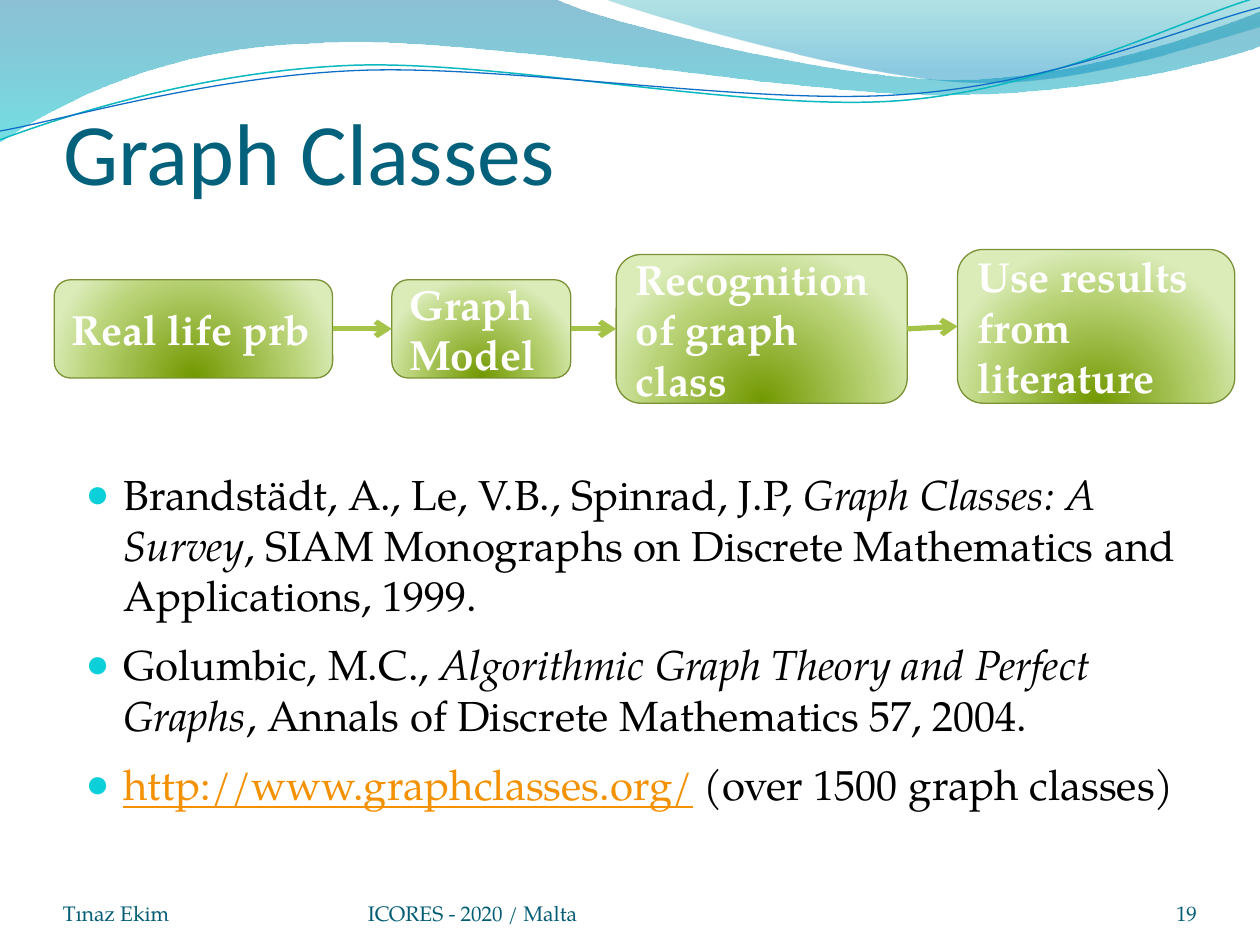
"""Build the Graph Classes slide with its flow of boxes and its references."""
from pptx import Presentation
from pptx.dml.color import RGBColor
from pptx.enum.shapes import MSO_CONNECTOR, MSO_SHAPE
from pptx.enum.text import MSO_ANCHOR, MSO_AUTO_SIZE, PP_ALIGN
from pptx.oxml import parse_xml
from pptx.oxml.ns import nsdecls, qn
from pptx.util import Inches, Pt

TITLE = RGBColor(0x04, 0x61, 0x7B)
FOOT = RGBColor(0x04, 0x5D, 0x75)
BLACK = RGBColor(0, 0, 0)
WHITE = RGBColor(0xFF, 0xFF, 0xFF)
LINK = RGBColor(0xF4, 0x91, 0x00)
BULLET = RGBColor(0x0B, 0xD0, 0xD9)
EDGE = RGBColor(0x7B, 0x91, 0x35)
ARROW = RGBColor(0xA5, 0xC2, 0x49)
TEAL = RGBColor(0x0A, 0xB8, 0xBF)
BLUE = RGBColor(0x0F, 0x6F, 0xC6)
GREENS = [(0, RGBColor(0x72, 0x98, 0x00), 100), (68, RGBColor(0xB8, 0xD2, 0x75), 100),
          (100, RGBColor(0xDB, 0xEC, 0xB9), 100)]
SEA = [(0, RGBColor(0x00, 0x74, 0xA1), 45), (100, RGBColor(0x00, 0xC6, 0xCF), 55)]
SKY = [(0, RGBColor(0x00, 0xA1, 0xA9), 30), (80, RGBColor(0x00, 0x8B, 0xBF), 45)]
DOWN = '<a:lin ang="5400000" scaled="0"/>'
GLOW = '<a:path path="circle"><a:fillToRect l="50000" t="130000" r="50000" b="-30000"/></a:path>'

WAVES = [
    ((0, 0), [(4.4, -0.01), (4.76, 0.17, 6.64, 0.63, 7.58, 0.63),
              (8.53, 0.63, 9.58, 0.26, 10, 0.09), (10.01, 0.36),
              (9.83, 0.44, 8.7, 0.76, 7.46, 0.75), (6.22, 0.75, 3.82, 0.28, 2.57, 0.34),
              (1.29, 0.36, 0.46, 0.83, -0.01, 1.13)], SEA),
    ((4.79, -0.01), [(5.09, 0.11, 6.82, 0.62, 7.69, 0.65),
                     (8.56, 0.69, 9.61, 0.32, 10, 0.21), (10, 0)], SKY),
]
STROKES = [
    ((0, 1.11), [(0.48, 0.93, 1.58, 0.57, 2.77, 0.52), (3.95, 0.47, 5.93, 0.89, 7.13, 0.8),
                 (8.33, 0.71, 9.38, 0.15, 9.98, -0.02)], TEAL, 0.85),
    ((0, 1.04), [(0.47, 0.96, 1.64, 0.61, 2.83, 0.56), (4.03, 0.51, 5.97, 0.84, 7.17, 0.75),
                 (8.36, 0.67, 9.41, 0.21, 10, 0.06)], BLUE, 0.75),
]
STEPS = [
    ("Real life prb", 0.43, 2.22, 2.21, 0.78),
    ("Graph Model", 3.11, 2.22, 1.42, 0.78),
    ("Recognition of graph class", 4.89, 2.02, 2.31, 1.18),
    ("Use results from literature", 7.6, 1.98, 2.2, 1.22),
]
PLAIN, SLANT, URL = {}, {"italic": True}, {"color": LINK, "underline": True}
BOOKS = [
    [("Brandstädt, A., Le, V.B., Spinrad, J.P, ", PLAIN), ("Graph Classes: A Survey", SLANT),
     (", SIAM Monographs on Discrete Mathematics and Applications, 1999.", PLAIN)],
    [("Golumbic, M.C., ", PLAIN), ("Algorithmic Graph Theory and Perfect Graphs", SLANT),
     (", Annals of Discrete Mathematics 57, 2004.", PLAIN)],
    [("http://www.graphclasses.org/", URL), (" (over 1500 graph classes)", PLAIN)],
]
NOTES = [
    ("Tınaz Ekim", 0.5, 2.33, PP_ALIGN.LEFT),
    ("ICORES - 2020 / Malta", 2.92, 3.67, PP_ALIGN.LEFT),
    ("19", 8.67, 0.83, PP_ALIGN.RIGHT),
]


class Deck:
    """Hold the style and the current slide."""

    def __init__(self):
        self.show = Presentation()
        self.show.slide_width, self.show.slide_height = Inches(10), Inches(7.5)
        self.slide = self.show.slides.add_slide(self.show.slide_layouts[1])
        self.shapes = self.slide.shapes
        self.font = "TeX Gyre Pagella"

    def run(self, para, text, size, color=BLACK, font=None, **style):
        run = para.add_run()
        run.text = text
        run.font.name = font or self.font
        run.font.size = Pt(size)
        run.font.color.rgb = color
        for name, value in style.items():
            setattr(run.font, name, value)

    def place(self, shape, *box):
        shape.left, shape.top, shape.width, shape.height = map(Inches, box)
        self.shapes._spTree.append(shape._element)
        shape.text_frame.auto_size = MSO_AUTO_SIZE.NONE
        return shape.text_frame

    def shade(self, shape, stops, kind):
        shape.fill.background()
        props = shape._element.spPr
        marks = "".join(
            f'<a:gs pos="{spot * 1000}"><a:srgbClr val="{color}">'
            f'<a:alpha val="{alpha * 1000}"/></a:srgbClr></a:gs>' for spot, color, alpha in stops)
        props.replace(props.find(qn("a:noFill")), parse_xml(
            f'<a:gradFill {nsdecls("a")} rotWithShape="1"><a:gsLst>{marks}</a:gsLst>{kind}</a:gradFill>'))

    def curve(self, start, parts, closed):
        spots = [(Inches(x), Inches(y)) for part in parts for x, y in zip(part[::2], part[1::2])]
        pen = self.shapes.build_freeform(*map(Inches, start))
        pen.add_line_segments(spots, close=closed)
        shape = pen.convert_to_shape()
        shape.shadow.inherit = False
        nodes = list(shape._element.iter(qn("a:lnTo")))
        for part in parts:
            count = len(part) // 2
            group, nodes = nodes[:count], nodes[count:]
            if count == 3:
                bend = parse_xml(f'<a:cubicBezTo {nsdecls("a")}/>')
                group[0].addprevious(bend)
                for node in group:
                    bend.append(node[0])
                    node.getparent().remove(node)
        return shape

    def wave(self, start, parts, stops):
        shape = self.curve(start, parts, True)
        self.shade(shape, stops, DOWN)
        shape.line.fill.background()

    def stroke(self, start, parts, color, width):
        shape = self.curve(start, parts, False)
        shape.fill.background()
        shape.line.color.rgb = color
        shape.line.width = Pt(width)

    def title(self, text):
        frame = self.place(self.shapes.title, 0.5, 0.36, 9, 1.25)
        frame.vertical_anchor = MSO_ANCHOR.BOTTOM
        frame.margin_left = frame.margin_right = frame.margin_bottom = 0
        frame.paragraphs[0].alignment = PP_ALIGN.LEFT
        self.run(frame.paragraphs[0], text, 50, TITLE, "Calibri")

    def items(self, rows):
        frame = self.place(self.slide.placeholders[1], 0.58, 3.67, 9.22, 3.31)
        for index, row in enumerate(rows):
            para = frame.add_paragraph() if index else frame.paragraphs[0]
            para.space_after = Pt(6)
            props = para._p.get_or_add_pPr()
            props.set("marL", str(Inches(0.3)))
            props.set("indent", str(-Inches(0.3)))
            for mark in (f'buClr {nsdecls("a")}><a:srgbClr val="{BULLET}"/></a:buClr>',
                         f'buSzPct {nsdecls("a")} val="95000"/>',
                         f'buChar {nsdecls("a")} char="●"/>'):
                props.append(parse_xml("<a:" + mark))
            for text, style in row:
                self.run(para, text, 24, **style)

    def note(self, text, left, width, align):
        box = self.shapes.add_textbox(Inches(left), Inches(6.95), Inches(width), Inches(0.4))
        frame = box.text_frame
        frame.word_wrap = True
        frame.vertical_anchor = MSO_ANCHOR.BOTTOM
        frame.margin_left = frame.margin_right = frame.margin_top = frame.margin_bottom = 0
        frame.paragraphs[0].alignment = align
        self.run(frame.paragraphs[0], text, 12, FOOT)

    def step(self, text, *box):
        shape = self.shapes.add_shape(MSO_SHAPE.ROUNDED_RECTANGLE, *map(Inches, box))
        shape.shadow.inherit = False
        self.shade(shape, GREENS, GLOW)
        shape.line.color.rgb = EDGE
        shape.line.width = Pt(0.75)
        frame = shape.text_frame
        frame.word_wrap = True
        frame.vertical_anchor = MSO_ANCHOR.MIDDLE
        frame.paragraphs[0].alignment = PP_ALIGN.LEFT
        self.run(frame.paragraphs[0], text, 24, WHITE, bold=True)
        return shape

    def arrow(self, first, last):
        line = self.shapes.add_connector(MSO_CONNECTOR.STRAIGHT, 0, 0, 0, 0)
        line.begin_connect(first, 3)
        line.end_connect(last, 1)
        line.line.color.rgb = ARROW
        line.line.width = Pt(3)
        line.line._get_or_add_ln().append(parse_xml(f'<a:tailEnd {nsdecls("a")} type="arrow"/>'))
        line._element.spPr.append(parse_xml(f'<a:effectLst {nsdecls("a")}/>'))


def main():
    deck = Deck()
    for wave in WAVES:
        deck.wave(*wave)
    for stroke in STROKES:
        deck.stroke(*stroke)
    deck.title("Graph Classes")
    deck.items(BOOKS)
    for note in NOTES:
        deck.note(*note)
    steps = [deck.step(*step) for step in STEPS]
    for first, last in zip(steps, steps[1:]):
        deck.arrow(first, last)
    deck.show.save("out.pptx")


if __name__ == "__main__":
    main()
